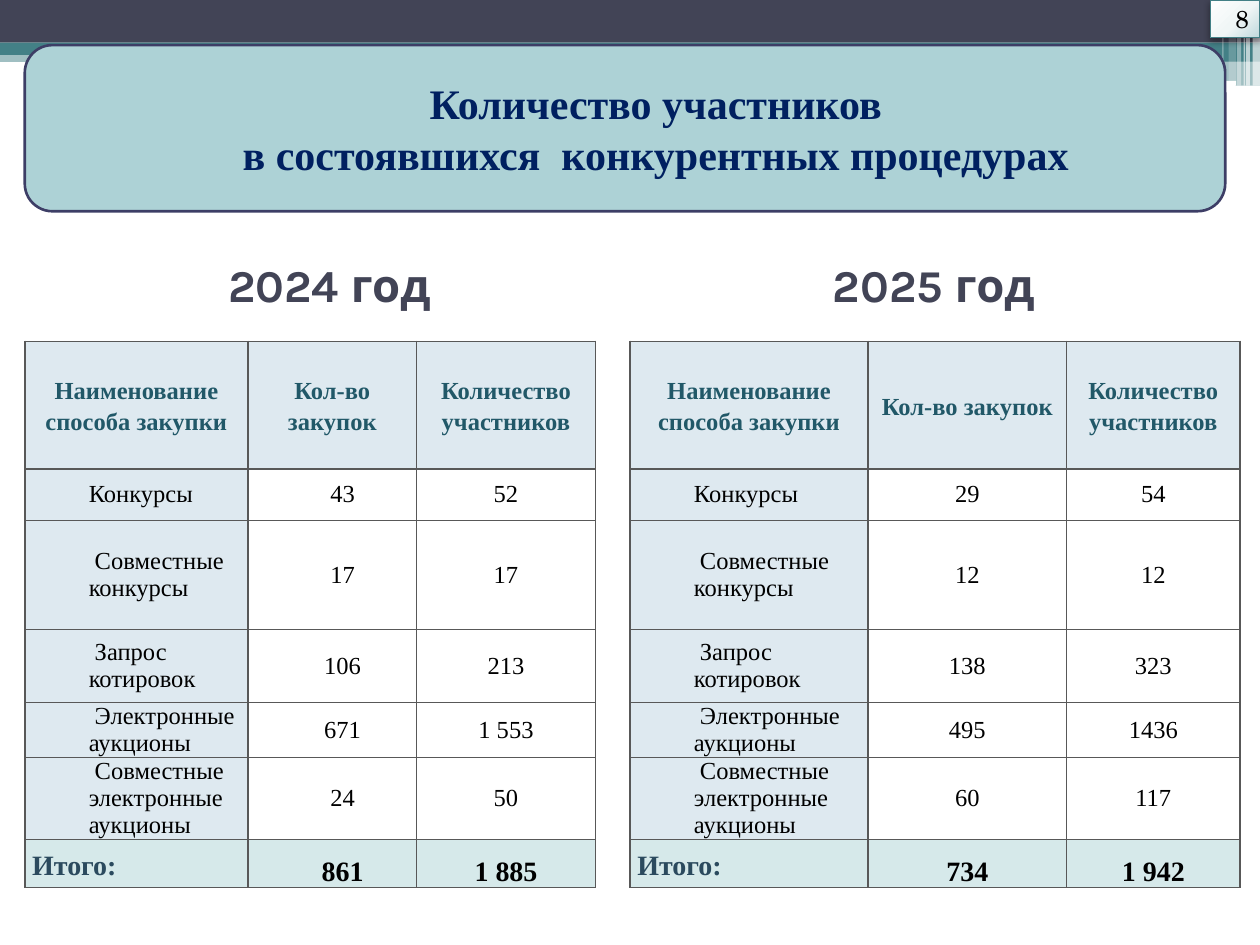
from lxml import etree
from pptx import Presentation
from pptx import util as u
from pptx.dml.color import RGBColor
from pptx.enum import shapes, text
from pptx.oxml import parse_xml
from pptx.oxml.ns import nsdecls, qn

WHITE = RGBColor(0xFF, 0xFF, 0xFF)
BLACK = RGBColor(0, 0, 0)
SLATE = RGBColor(0x42, 0x44, 0x56)
TEAL = RGBColor(0x43, 0x80, 0x86)
BANNER = RGBColor(0xAD, 0xD2, 0xD6)
BANNER_LINE = RGBColor(0x3D, 0x3E, 0x66)
NAVY = RGBColor(0x00, 0x20, 0x60)
HEAD_TEXT = RGBColor(0x21, 0x58, 0x68)
TOTAL_TEXT = RGBColor(0x2B, 0x4A, 0x5E)
PALE_BLUE = RGBColor(0xDE, 0xE9, 0xF0)
PALE_TEAL = RGBColor(0xD6, 0xE9, 0xEA)
BORDER = RGBColor(0x58, 0x58, 0x58)
SERIF = "Times New Roman"


def add_block(left, top, width, height, color, opacity=100, kind=shapes.MSO_SHAPE.RECTANGLE):
    block = page.shapes.add_shape(kind, u.Cm(left), u.Cm(top), u.Cm(width), u.Cm(height))
    block.shadow.inherit = False
    block.fill.solid()
    block.fill.fore_color.rgb = color
    block.line.fill.background()
    if opacity < 100:
        tint = block._element.spPr.find(".//" + qn("a:srgbClr"))
        etree.SubElement(tint, qn("a:alpha")).set("val", str(opacity * 1000))
    return block


def set_font(para, name, size, color, bold=False):
    para.font.name = name
    para.font.size = u.Pt(size)
    para.font.color.rgb = color
    para.font.bold = bold


deck = Presentation()
deck.slide_width, deck.slide_height = u.Cm(25.4), u.Cm(19.05)
page = deck.slides.add_slide(deck.slide_layouts[5])

add_block(0, 1.02, 25.4, 0.23, TEAL, 50)
add_block(0, 0, 25.4, 0.86, SLATE)
add_block(0, 0.86, 25.4, 0.25, TEAL)
add_block(15.04, 0.99, 10.36, 0.25, TEAL)
add_block(15.04, 1.22, 10.36, 0.51, TEAL, 50)
add_block(20.47, 1.63, 4.45, 0.1, WHITE, kind=shapes.MSO_SHAPE.ROUNDED_RECTANGLE)
for left, width, height, opacity in [
    (25.25, 0.15, 1.73, 65),
    (25.12, 0.08, 1.73, 65),
    (25.07, 0.03, 1.73, 60),
    (24.94, 0.08, 1.73, 40),
    (24.77, 0.15, 1.63, 20),
    (24.64, 0.03, 1.63, 30),
]:
    add_block(left, 0, width, height, WHITE, opacity)

title = page.shapes.title
title.left, title.top, title.width, title.height = u.Cm(1.68), u.Cm(5.13), u.Cm(22), u.Cm(1.22)
frame = title.text_frame
frame.text = "2024 год\t2025 год"
frame.vertical_anchor = text.MSO_ANCHOR.MIDDLE
frame.margin_left, frame.margin_right = u.Cm(2.92), 0
frame.margin_top = frame.margin_bottom = 0
para = frame.paragraphs[0]
para.alignment = text.PP_ALIGN.LEFT
tabs = etree.SubElement(para._p.get_or_add_pPr(), qn("a:tabLst"))
etree.SubElement(tabs, qn("a:tab"), pos=str(u.Cm(12.19)), algn="l")
set_font(para, "Karla", 26, SLATE, True)

banner = add_block(0.5, 0.91, 24.2, 3.35, BANNER, kind=shapes.MSO_SHAPE.ROUNDED_RECTANGLE)
banner.line.color.rgb = BANNER_LINE
banner.line.width = u.Pt(1.5)
frame = banner.text_frame
frame.text = "Количество участников\nв состоявшихся  конкурентных процедурах"
frame.vertical_anchor = text.MSO_ANCHOR.MIDDLE
for para in frame.paragraphs:
    para.alignment = text.PP_ALIGN.CENTER
    para._p.get_or_add_pPr().set("indent", str(u.Cm(1.24)))
    set_font(para, SERIF, 24, NAVY, True)

badge = add_block(24.4, 0, 1, 0.76, WHITE)
badge.line.color.rgb = TEAL
badge.line.width = u.Pt(0.75)
properties = badge._element.spPr
properties.replace(properties.find(qn("a:solidFill")), parse_xml(
    f'<a:gradFill {nsdecls("a")} rotWithShape="1"><a:gsLst>'
    '<a:gs pos="0"><a:srgbClr val="FEFEFE"/></a:gs>'
    '<a:gs pos="55000"><a:srgbClr val="F0F6F6"/></a:gs>'
    '<a:gs pos="100000"><a:srgbClr val="BFD9DD"/></a:gs></a:gsLst>'
    '<a:path path="circle"><a:fillToRect l="-40000" t="-90000" r="140000" b="190000"/></a:path>'
    '</a:gradFill>'))
properties.find(qn("a:effectLst")).append(parse_xml(
    f'<a:outerShdw {nsdecls("a")} blurRad="52000" dist="25400" dir="5400000">'
    '<a:srgbClr val="000000"><a:alpha val="40000"/></a:srgbClr></a:outerShdw>'))
frame = badge.text_frame
frame.text = "8"
frame.vertical_anchor = text.MSO_ANCHOR.MIDDLE
frame.margin_left = u.Cm(0.28)
frame.margin_right = frame.margin_top = frame.margin_bottom = 0
frame.paragraphs[0].alignment = text.PP_ALIGN.CENTER
set_font(frame.paragraphs[0], "TeX Gyre Schola", 14, BLACK)

headings = ["Наименование способа закупки", "Кол-во закупок", "Количество участников"]
methods = ["Конкурсы", "Совместные конкурсы", "Запрос котировок", "Электронные аукционы",
           "Совместные электронные аукционы", "Итого:"]
row_heights = [2.57, 1.04, 2.2, 1.47, 1.11, 1.65, 0.97]
years = [
    (0.5, [4.5, 3.4, 3.6], 0.43,
     ["43", "17", "106", "671", "24", "861"],
     ["52", "17", "213", "1 553", "50", "1 885"]),
    (12.7, [4.8, 4, 3.5], 0.02,
     ["29", "12", "138", "495", "60", "734"],
     ["54", "12", "323", "1436", "117", "1 942"]),
]
for left, widths, count_inset, purchases, bidders in years:
    rows = [headings, *zip(methods, purchases, bidders)]
    table = page.shapes.add_table(len(rows), 3, u.Cm(left), u.Cm(6.88),
                                  u.Cm(sum(widths)), u.Cm(sum(row_heights))).table
    for column, width in zip(table.columns, widths):
        column.width = u.Cm(width)
    for r, row in enumerate(rows):
        table.rows[r].height = u.Cm(row_heights[r])
        head, total = r == 0, r == len(rows) - 1
        for c, words in enumerate(row):
            cell = table.cell(r, c)
            cell.text = words
            label = c == 0
            edge = 0.15 if head or (total and label) else 0.02
            cell.margin_left = u.Cm(count_inset if c == 1 and not head else edge)
            cell.margin_right = u.Cm(edge)
            cell.margin_top = cell.margin_bottom = 0
            low = total and not label
            cell.vertical_anchor = text.MSO_ANCHOR.BOTTOM if low else text.MSO_ANCHOR.MIDDLE
            para = cell.text_frame.paragraphs[0]
            para.alignment = text.PP_ALIGN.LEFT if label and not head else text.PP_ALIGN.CENTER
            if head or (total and label):
                para.line_spacing = 1.15
            elif label:
                layout = para._p.get_or_add_pPr()
                layout.set("marL", str(u.Cm(1.27)))
                layout.set("indent", str(u.Cm(0.12 if r > 1 else 0)))
            color = HEAD_TEXT if head else TOTAL_TEXT if total and label else BLACK
            set_font(para, SERIF, 16 if total else 14, color, head or total)
            for side in ("L", "R", "T", "B"):
                cell._tc.get_or_add_tcPr().append(parse_xml(
                    f'<a:ln{side} {nsdecls("a")} w="12700"><a:solidFill>'
                    f'<a:srgbClr val="{BORDER}"/></a:solidFill></a:ln{side}>'))
            if total or head or label:
                cell.fill.solid()
                cell.fill.fore_color.rgb = PALE_TEAL if total else PALE_BLUE
            else:
                cell.fill.background()

deck.save("out.pptx")
